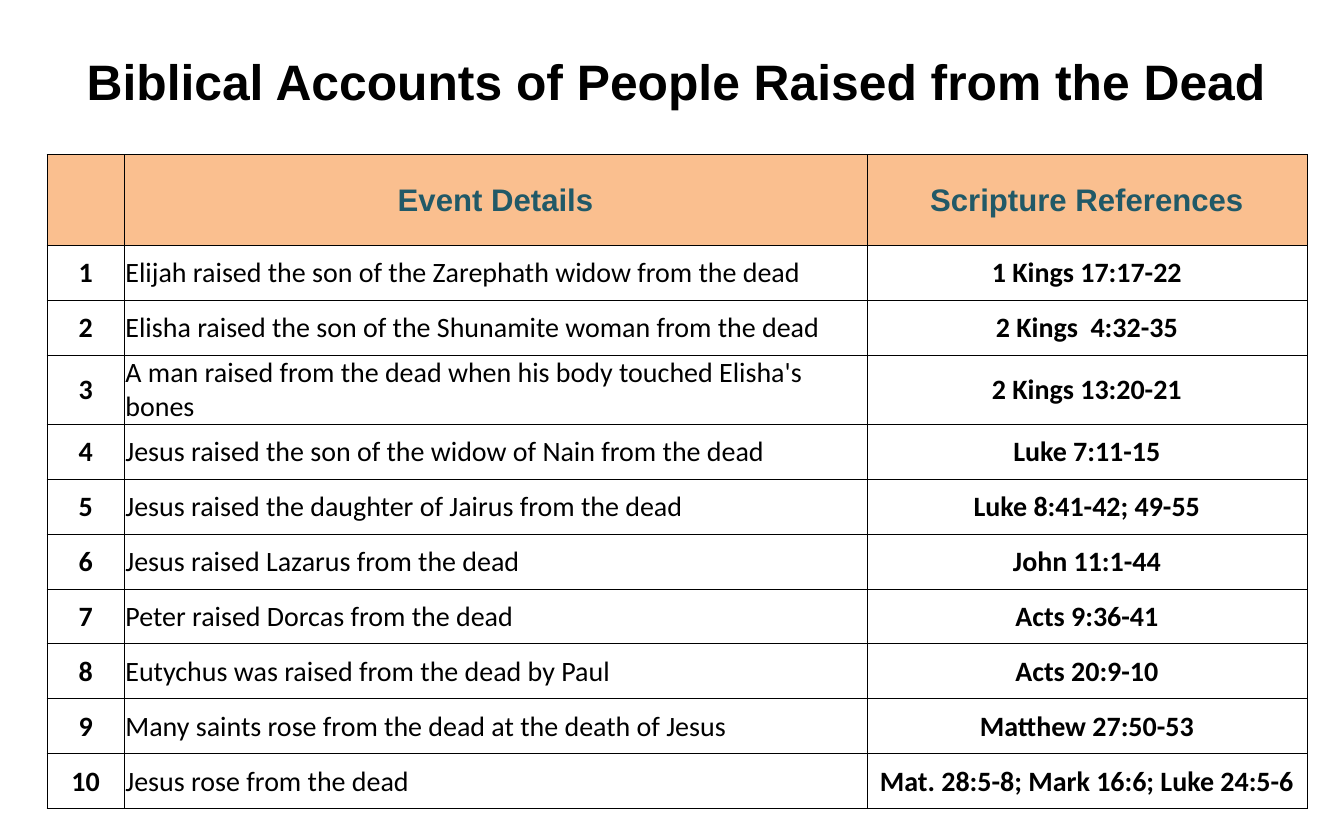
from lxml import etree
from pptx import Presentation
from pptx import util as u
from pptx.dml.color import RGBColor
from pptx.enum import text
from pptx.oxml import ns

BLACK = RGBColor(0x00, 0x00, 0x00)
TEAL = RGBColor(0x21, 0x59, 0x67)
PEACH = RGBColor(0xFA, 0xBF, 0x8F)

CENTER, LEFT = text.PP_ALIGN.CENTER, text.PP_ALIGN.LEFT
MIDDLE, BOTTOM = text.MSO_ANCHOR.MIDDLE, text.MSO_ANCHOR.BOTTOM
TITLE = {"name": "Arial", "size": u.Pt(32), "bold": True}
HEADER = {"name": "Arial", "size": u.Pt(20), "bold": True}
STRONG = {"name": "Calibri", "size": u.Pt(18), "bold": True}
PLAIN = {**STRONG, "bold": False}

EVENTS = [
    ("Elijah raised the son of the Zarephath widow from the dead", "1 Kings 17:17-22"),
    ("Elisha raised the son of the Shunamite woman from the dead", "2 Kings  4:32-35"),
    ("A man raised from the dead when his body touched Elisha's bones", "2 Kings 13:20-21"),
    ("Jesus raised the son of the widow of Nain from the dead", "Luke 7:11-15"),
    ("Jesus raised the daughter of Jairus from the dead", "Luke 8:41-42; 49-55"),
    ("Jesus raised Lazarus from the dead", "John 11:1-44"),
    ("Peter raised Dorcas from the dead", "Acts 9:36-41"),
    ("Eutychus was raised from the dead by Paul", "Acts 20:9-10"),
    ("Many saints rose from the dead at the death of Jesus", "Matthew 27:50-53"),
    ("Jesus rose from the dead", "Mat. 28:5-8; Mark 16:6; Luke 24:5-6"),
]
COLUMN_WIDTHS = [0.69, 6.63, 3.93]
ROW_HEIGHTS = [0.74, 0.39, 0.81] + [0.49] * len(EVENTS)
ROW_HEIGHTS[5] = 0.62  # the event that wraps to two lines


def set_borders(cell, visible_sides):
    properties = cell._tc.get_or_add_tcPr()
    for side in "LRTB":
        line = etree.SubElement(properties, ns.qn(f"a:ln{side}"), w=str(u.Pt(0.5)))
        if side in visible_sides:
            fill = etree.SubElement(line, ns.qn("a:solidFill"))
            etree.SubElement(fill, ns.qn("a:srgbClr"), val=str(BLACK))
        else:
            etree.SubElement(line, ns.qn("a:noFill"))


def write(cell, words, style, color=BLACK, align=CENTER, anchor=MIDDLE):
    cell.vertical_anchor = anchor
    para = cell.text_frame.paragraphs[0]
    para.alignment = align
    span = para.add_run()
    span.text = words
    for name, value in style.items():
        setattr(span.font, name, value)
    span.font.color.rgb = color


deck = Presentation()
deck.slide_width, deck.slide_height = u.Inches(12), u.Inches(7.5)
page = deck.slides.add_slide(deck.slide_layouts[6])

# Table grid
table = page.shapes.add_table(
    len(ROW_HEIGHTS), len(COLUMN_WIDTHS), u.Inches(0.42), u.Inches(0.25),
    u.Inches(sum(COLUMN_WIDTHS)), u.Inches(sum(ROW_HEIGHTS))).table
table.first_row = table.horz_banding = False
for column, width in zip(table.columns, COLUMN_WIDTHS):
    column.width = u.Inches(width)
for row, height in zip(table.rows, ROW_HEIGHTS):
    row.height = u.Inches(height)

# Cell margins, borders and fills
for index, row in enumerate(table.rows):
    for cell in row.cells:
        cell.margin_left = cell.margin_right = cell.margin_top = u.Inches(0.01)
        cell.margin_bottom = 0
        set_borders(cell, ("", "B")[index] if index < 2 else "LRTB")
        if index == 2:
            cell.fill.solid()
            cell.fill.fore_color.rgb = PEACH
        else:
            cell.fill.background()

# Title row across all columns
table.cell(0, 0).merge(table.cell(0, 2))
write(table.cell(0, 0), "Biblical Accounts of People Raised from the Dead", TITLE, anchor=BOTTOM)

# Column headings
for column, heading in enumerate(["Event Details", "Scripture References"], start=1):
    write(table.cell(2, column), heading, HEADER, TEAL)

# Numbered events
for number, (event, reference) in enumerate(EVENTS, start=1):
    row = number + 2
    write(table.cell(row, 0), str(number), STRONG)
    write(table.cell(row, 1), event, PLAIN, align=LEFT)
    write(table.cell(row, 2), reference, STRONG)

deck.save("out.pptx")
